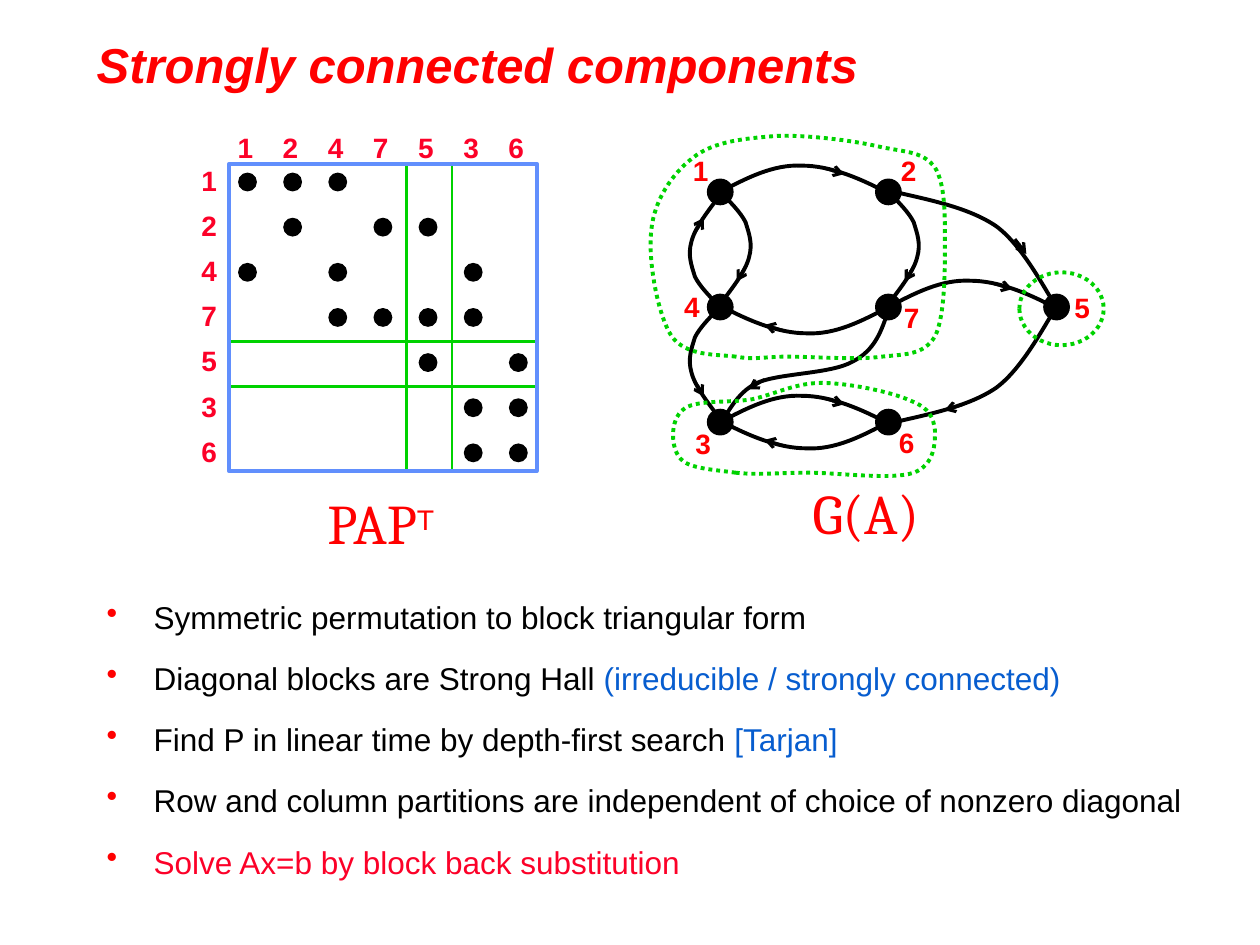
import pptx
import pptx.dml.color
import pptx.enum.dml
import pptx.enum.shapes
import pptx.enum.text
import pptx.oxml
import pptx.oxml.ns
import pptx.util

Cm = pptx.util.Cm
Pt = pptx.util.Pt
ALIGN = pptx.enum.text.PP_ALIGN
SHAPE = pptx.enum.shapes.MSO_SHAPE
DOTTED = pptx.enum.dml.MSO_LINE.ROUND_DOT

COLORS = {"red": "FF0000", "label": "FC0128", "blue": "075DCF", "black": "000000",
          "frame": "618FFD", "green": "00D200"}

ORDER = "1247536"
NONZEROS = {"1": "124", "2": "275", "4": "143", "7": "4753", "5": "56", "3": "36", "6": "36"}

NODES = {"1": (0, 0, -0.8, -0.9), "2": (1, 0, 0, -0.9), "4": (0, 1, -0.98, -0.48),
         "7": (1, 1, 0.06, -0.25), "5": (2, 1, 0.11, -0.45), "3": (0, 2, -0.75, -0.04),
         "6": (1, 2, -0.04, -0.06)}

ACROSS = [(0, 0), (0.53, -0.28), (1.07, -0.56), (1.65, -0.53), (2.21, -0.53),
          (2.82, -0.28), (3.43, 0.05)]
DOWN = [(0, 0), (0.2, 0.2), (0.41, 0.41), (0.51, 0.61), (0.58, 0.84), (0.66, 1.04),
        (0.58, 1.32), (0.51, 1.6), (0.25, 1.93), (0, 2.26)]
OUTER = [(0, 0), (-0.2, 0.28), (-0.66, 1.22), (-1.22, 1.63), (-1.78, 2.01),
         (-2.57, 2.16), (-3.35, 2.34)]
DIAGONAL = [(0, 0), (0.13, -0.1), (0.3, -0.58), (0.74, -0.79), (1.19, -0.99),
            (2.24, -0.97), (2.67, -1.22), (3.12, -1.45), (3.25, -1.83), (3.4, -2.29)]
ACROSS_HEAD = [(2.1, -0.48), (2.5, -0.36)]
DOWN_HEAD = [(0.53, 1.47), (0.33, 1.8)]

EDGES = [("1", ACROSS, ACROSS_HEAD, 1, 1), ("7", ACROSS, ACROSS_HEAD, 1, 1),
         ("3", ACROSS, ACROSS_HEAD, 1, 1), ("6", ACROSS, ACROSS_HEAD, -1, -1),
         ("7", ACROSS, ACROSS_HEAD, -1, -1), ("4", DOWN, DOWN_HEAD, -1, -1),
         ("4", DOWN, DOWN_HEAD, -1, 1), ("1", DOWN, DOWN_HEAD, 1, 1),
         ("2", DOWN, DOWN_HEAD, 1, 1),
         ("3", DIAGONAL, [(0.89, -0.86), (0.56, -0.66)], 1, 1),
         ("5", OUTER, [(-1.88, 1.96), (-2.26, 2.08)], 1, 1),
         ("5", OUTER, [(-0.94, 1.37), (-0.71, 1.07)], 1, -1)]

COMPONENTS = [
    [(1.83, 4.49), (1.45, 4.44), (0.84, 4.49), (0.54, 4.08), (0.26, 3.65), (0.06, 2.56),
     (0.13, 1.95), (0.18, 1.36), (0.54, 0.81), (0.97, 0.48), (1.4, 0.14), (2.04, 0.09),
     (2.67, 0.04), (3.31, 0.02), (4.25, 0.14), (4.78, 0.27), (5.31, 0.37), (5.62, 0.37),
     (5.85, 0.68), (6.05, 1.01), (6.05, 1.59), (6.05, 2.18), (6.05, 2.74), (6.05, 3.68),
     (5.85, 4.08), (5.62, 4.46), (5.26, 4.44), (4.78, 4.49), (4.3, 4.56), (3.36, 4.49),
     (2.88, 4.49), (2.39, 4.49), (2.24, 4.56), (1.83, 4.49)],
    [(1.83, 6.83), (1.4, 6.77), (0.89, 6.75), (0.72, 6.55), (0.51, 6.32), (0.51, 5.76),
     (0.77, 5.56), (1, 5.35), (1.68, 5.43), (2.16, 5.35), (2.62, 5.25), (3.03, 5.02),
     (3.56, 5.02), (4.09, 5.02), (4.98, 5.2), (5.36, 5.38), (5.75, 5.53), (5.82, 5.73),
     (5.85, 5.99), (5.85, 6.22), (5.85, 6.67), (5.42, 6.83), (4.98, 6.98), (3.89, 6.83),
     (3.31, 6.83), (2.7, 6.83), (2.27, 6.88), (1.83, 6.83)]]

BULLETS = [
    [("Symmetric permutation to block triangular form", "black")],
    [("Diagonal blocks are Strong Hall ", "black"),
     ("(irreducible / strongly connected)", "blue")],
    [("Find P in linear time by depth-first search ", "black"), ("[Tarjan]", "blue")],
    [("Row and column partitions are independent of choice of nonzero diagonal", "black")],
    [("Solve Ax=b by block back substitution", "label")]]


def rgb(color):
    return pptx.dml.color.RGBColor.from_string(COLORS[color])


def add_run(paragraph, text, size, color, font="Arial", bold=False, italic=False):
    run = paragraph.add_run()
    run.text = text
    run.font.name, run.font.size = font, Pt(size)
    run.font.bold, run.font.italic = bold, italic
    run.font.color.rgb = rgb(color)
    return run


def add_frame(slide, x, y, width, height, wrap=False):
    frame = slide.shapes.add_textbox(Cm(x), Cm(y), Cm(width), Cm(height)).text_frame
    frame.word_wrap = wrap
    return frame


def add_label(slide, x, y, text, color, align=ALIGN.LEFT):
    label = add_frame(slide, x, y, 0.81, 0.94).paragraphs[0]
    label.alignment = align
    add_run(label, text, 16, color, bold=True)


def outline(shape, color, width, dash=None):
    shape.shadow.inherit = False
    shape.fill.background()
    shape.line.color.rgb = rgb(color)
    shape.line.width = Pt(width)
    if dash:
        shape.line.dash_style = dash


def add_dot(slide, x, y, size):
    dot = slide.shapes.add_shape(SHAPE.OVAL, Cm(x), Cm(y), Cm(size), Cm(size))
    dot.shadow.inherit = False
    dot.fill.solid()
    dot.fill.fore_color.rgb = rgb("black")
    dot.line.fill.background()


def add_line(slide, start, end, color, width, arrow=False):
    line = slide.shapes.add_connector(
        pptx.enum.shapes.MSO_CONNECTOR.STRAIGHT, *[Cm(v) for v in (*start, *end)])
    line.line.color.rgb = rgb(color)
    line.line.width = Pt(width)
    if arrow:
        head = pptx.oxml.parse_xml(f'<a:tailEnd {pptx.oxml.ns.nsdecls("a")} type="arrow"/>')
        line.line._get_or_add_ln().append(head)
    line._element.spPr.append(
        pptx.oxml.parse_xml(f'<a:effectLst {pptx.oxml.ns.nsdecls("a")}/>'))


def add_curve(slide, points, color, closed=False, dash=None):
    start, *controls = [(Cm(x), Cm(y)) for x, y in points]
    builder = slide.shapes.build_freeform(*start)
    builder.add_line_segments(controls, close=closed)
    curve = builder.convert_to_shape()
    segments = curve._element.findall(".//" + pptx.oxml.ns.qn("a:lnTo"))
    for first, second, third in zip(segments[::3], segments[1::3], segments[2::3]):
        bezier = pptx.oxml.parse_xml(f'<a:cubicBezTo {pptx.oxml.ns.nsdecls("a")}/>')
        first.addprevious(bezier)
        for segment in (first, second, third):
            bezier.append(segment[0])
            segment.getparent().remove(segment)
    outline(curve, color, 2.25, dash)


def place(points, x, y, flip_x=1, flip_y=1):
    return [(x + flip_x * dx, y + flip_y * dy) for dx, dy in points]


def add_title(slide, x, y, width, height):
    frame = add_frame(slide, x, y, width, height, wrap=True)
    frame.vertical_anchor = pptx.enum.text.MSO_ANCHOR.MIDDLE
    add_run(frame.paragraphs[0], "Strongly connected components", 28, "red",
            bold=True, italic=True)


def add_matrix(slide, x, y, side):
    pitch = 0.91
    for index in (4, 5):
        cut = index * pitch - 0.06
        add_line(slide, (x, y + cut), (x + side, y + cut), "green", 1.5)
        add_line(slide, (x + cut, y), (x + cut, y + side), "green", 1.5)
    border = slide.shapes.add_shape(SHAPE.RECTANGLE, Cm(x), Cm(y), Cm(side), Cm(side))
    outline(border, "frame", 2.25)
    for index, vertex in enumerate(ORDER):
        step = index * pitch
        add_label(slide, x + step - 0.08, y - 0.79, vertex, "label")
        add_label(slide, x - 0.81, y + step - 0.13, vertex, "label", ALIGN.RIGHT)
        for column in NONZEROS[vertex]:
            add_dot(slide, x + 0.18 + ORDER.index(column) * pitch, y + 0.18 + step, 0.38)
    caption = add_frame(slide, x + 1.73, y + 6.43, 3, 1.6).paragraphs[0]
    add_run(caption, "PAP", 32, "red", "Cambria")
    transpose = add_run(caption, "T", 28, "red")
    transpose._r.get_or_add_rPr().set("baseline", "30000")


def add_graph(slide, x, y):
    centres = {vertex: (x + 1.52 + column * 3.39, y + 1.17 + row * 2.32)
               for vertex, (column, row, _, _) in NODES.items()}
    for vertex, (cx, cy) in centres.items():
        add_dot(slide, cx - 0.27, cy - 0.27, 0.54)
        add_label(slide, cx + NODES[vertex][2], cy + NODES[vertex][3], vertex, "red")
    for vertex, curve, head, flip_x, flip_y in EDGES:
        add_curve(slide, place(curve, *centres[vertex], flip_x, flip_y), "black")
        tip = place(head, *centres[vertex], flip_x, flip_y)
        if curve is OUTER and flip_y < 0:
            tip = place(head, centres[vertex][0] + 0.1, centres[vertex][1], 1, -1)
        add_line(slide, *tip, "black", 1.75, arrow=True)
    for component in COMPONENTS:
        add_curve(slide, place(component, x, y), "green", closed=True, dash=DOTTED)
    singleton = slide.shapes.add_shape(
        SHAPE.OVAL, Cm(x + 7.55), Cm(y + 2.79), Cm(1.7), Cm(1.47))
    outline(singleton, "green", 2.25, DOTTED)
    caption = add_frame(slide, x + 3.13, y + 6.83, 3.18, 1.6).paragraphs[0]
    add_run(caption, "G(A)", 32, "red", "Cambria")


def add_bullets(slide, x, y, width, height):
    frame = add_frame(slide, x, y, width, height, wrap=True)
    for index, runs in enumerate(BULLETS):
        point = frame.add_paragraph() if index else frame.paragraphs[0]
        point.line_spacing, point.space_before = 1.4, Pt(4.7)
        properties = point._p.get_or_add_pPr()
        properties.set("marL", str(Cm(0.95)))
        properties.set("indent", str(Cm(-0.95)))
        for mark in (f'<a:buClr {pptx.oxml.ns.nsdecls("a")}>'
                     f'<a:srgbClr val="{COLORS["red"]}"/></a:buClr>',
                     f'<a:buChar {pptx.oxml.ns.nsdecls("a")} char="•"/>'):
            properties.append(pptx.oxml.parse_xml(mark))
        for text, color in runs:
            add_run(point, text, 18, color)


def main():
    deck = pptx.Presentation()
    deck.slide_width, deck.slide_height = Cm(25.4), Cm(19.05)
    slide = deck.slides.add_slide(deck.slide_layouts[6])
    add_title(slide, 1.7, 0.43, 20.8, 1.7)
    add_bullets(slide, 1.9, 11.63, 22.86, 6.55)
    add_matrix(slide, 4.62, 3.3, 6.2)
    add_graph(slide, 13, 2.7)
    deck.save("out.pptx")


if __name__ == "__main__":
    main()
